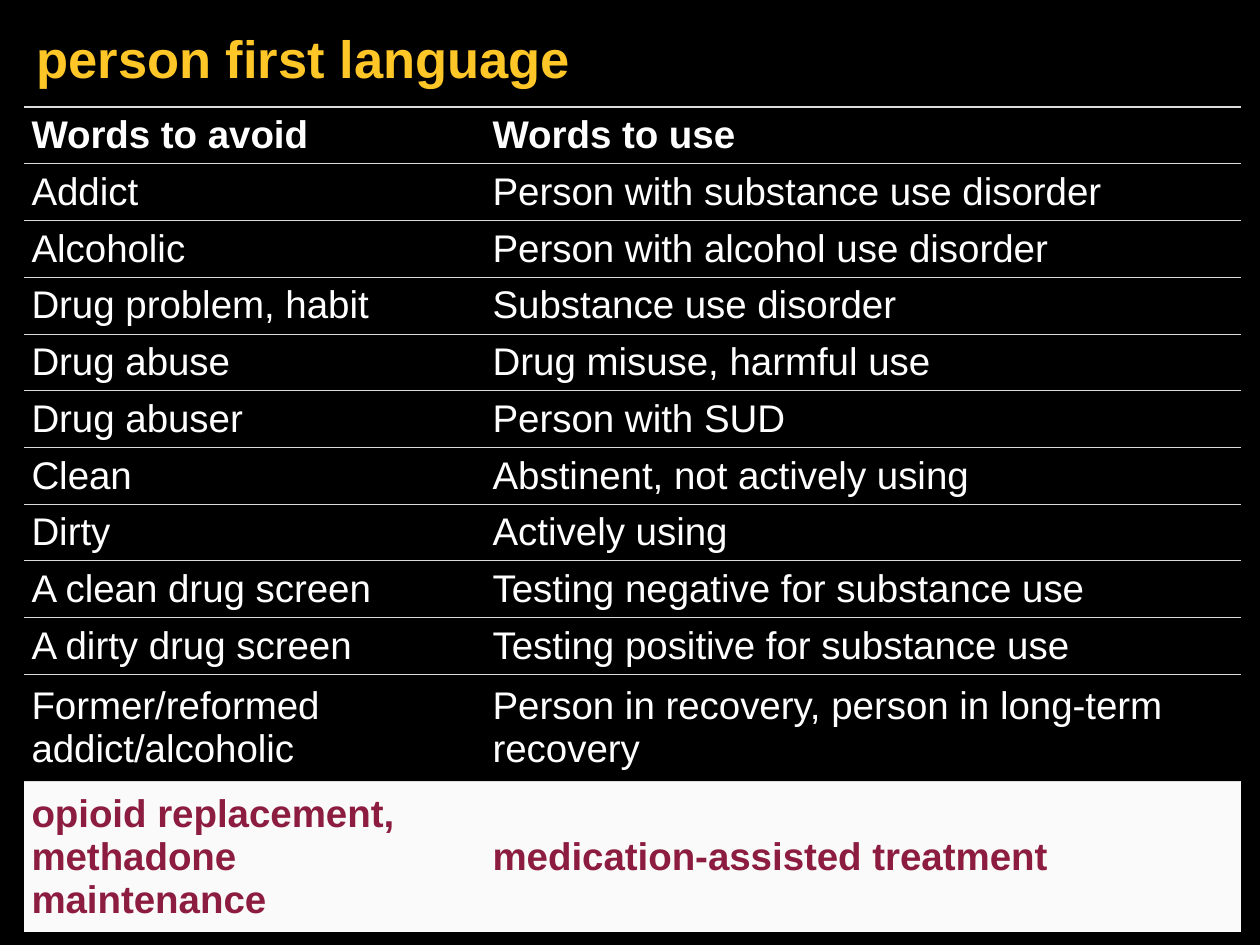
from lxml.etree import SubElement
from pptx import Presentation
from pptx.dml.color import RGBColor
from pptx.enum.text import MSO_ANCHOR, PP_ALIGN
from pptx.oxml.ns import qn
from pptx.util import Inches, Pt

COLORS = {
    "back": "000000",
    "title": "FFC627",
    "text": "FFFFFF",
    "rule": "DCDCDC",
    "band": "FAFAFA",
    "accent": "8C1D40",
}
FONT = "Arial"

TERMS = [
    ("Words to avoid", "Words to use"),
    ("Addict", "Person with substance use disorder"),
    ("Alcoholic", "Person with alcohol use disorder"),
    ("Drug problem, habit", "Substance use disorder"),
    ("Drug abuse", "Drug misuse, harmful use"),
    ("Drug abuser", "Person with SUD"),
    ("Clean", "Abstinent, not actively using"),
    ("Dirty", "Actively using"),
    ("A clean drug screen", "Testing negative for substance use"),
    ("A dirty drug screen", "Testing positive for substance use"),
    ("Former/reformed addict/alcoholic",
     "Person in recovery, person in long-term recovery"),
    ("opioid replacement, methadone maintenance",
     "medication-assisted treatment"),
]
LAST = len(TERMS) - 1
WIDTHS = [3.66, 6]
HEIGHTS = [0.45] * (LAST - 1) + [0.85, 1.2]


def color(name):
    return RGBColor.from_string(COLORS[name])


def style(frame, size, name, bold):
    for par in frame.paragraphs:
        par.alignment = PP_ALIGN.LEFT
        for run in par.runs:
            run.font.name = FONT
            run.font.size = Pt(size)
            run.font.bold = bold
            run.font.color.rgb = color(name)


def add_title(slide, text):
    title = slide.shapes.title
    title.left, title.top = Inches(0.19), Inches(0.14)
    title.width, title.height = Inches(6.54), Inches(0.82)
    frame = title.text_frame
    frame.text = text
    frame.word_wrap = True
    frame.vertical_anchor = MSO_ANCHOR.TOP
    frame.margin_top = Inches(0.07)
    style(frame, 30, "title", True)


def set_rules(cell, top, bottom):
    """Draw rules above and below; a width of 0 hides the edge."""
    props = cell._tc.get_or_add_tcPr()
    edges = [("L", 0), ("R", 0), ("T", top), ("B", bottom)]
    for spot, (side, width) in enumerate(edges):
        line = SubElement(props, qn(f"a:ln{side}"), w=str(Pt(width)))
        if width:
            fill = SubElement(line, qn("a:solidFill"))
            SubElement(fill, qn("a:srgbClr"), val=COLORS["rule"])
        else:
            SubElement(line, qn("a:noFill"))
        props.insert(spot, line)


def fill_cell(cell, text, row):
    cell.text = text
    cell.vertical_anchor = MSO_ANCHOR.MIDDLE
    cell.margin_left = cell.margin_right = Inches(0.06)
    cell.margin_top = cell.margin_bottom = Inches(0.03)
    if row == LAST:
        cell.fill.solid()
        cell.fill.fore_color.rgb = color("band")
    else:
        cell.fill.background()
    style(cell.text_frame, 22, "accent" if row == LAST else "text",
          row in (0, LAST))
    set_rules(cell, 1 if row == 0 else 0.5, 0 if row == LAST else 0.5)


def add_terms(slide):
    frame = slide.shapes.add_table(
        len(TERMS), len(WIDTHS), Inches(0.19), Inches(0.85),
        Inches(sum(WIDTHS)), Inches(sum(HEIGHTS)))
    table = frame.table
    table.first_row = table.horz_banding = False
    for col, width in zip(table.columns, WIDTHS):
        col.width = Inches(width)
    for row, pair in enumerate(TERMS):
        table.rows[row].height = Inches(HEIGHTS[row])
        for col, text in enumerate(pair):
            fill_cell(table.cell(row, col), text, row)


def main():
    deck = Presentation()
    deck.slide_width, deck.slide_height = Inches(10), Inches(7.5)
    slide = deck.slides.add_slide(deck.slide_layouts[5])

    # Background
    slide.background.fill.solid()
    slide.background.fill.fore_color.rgb = color("back")

    # Title and table of terms
    add_title(slide, "person first language")
    add_terms(slide)

    deck.save("out.pptx")


if __name__ == "__main__":
    main()
